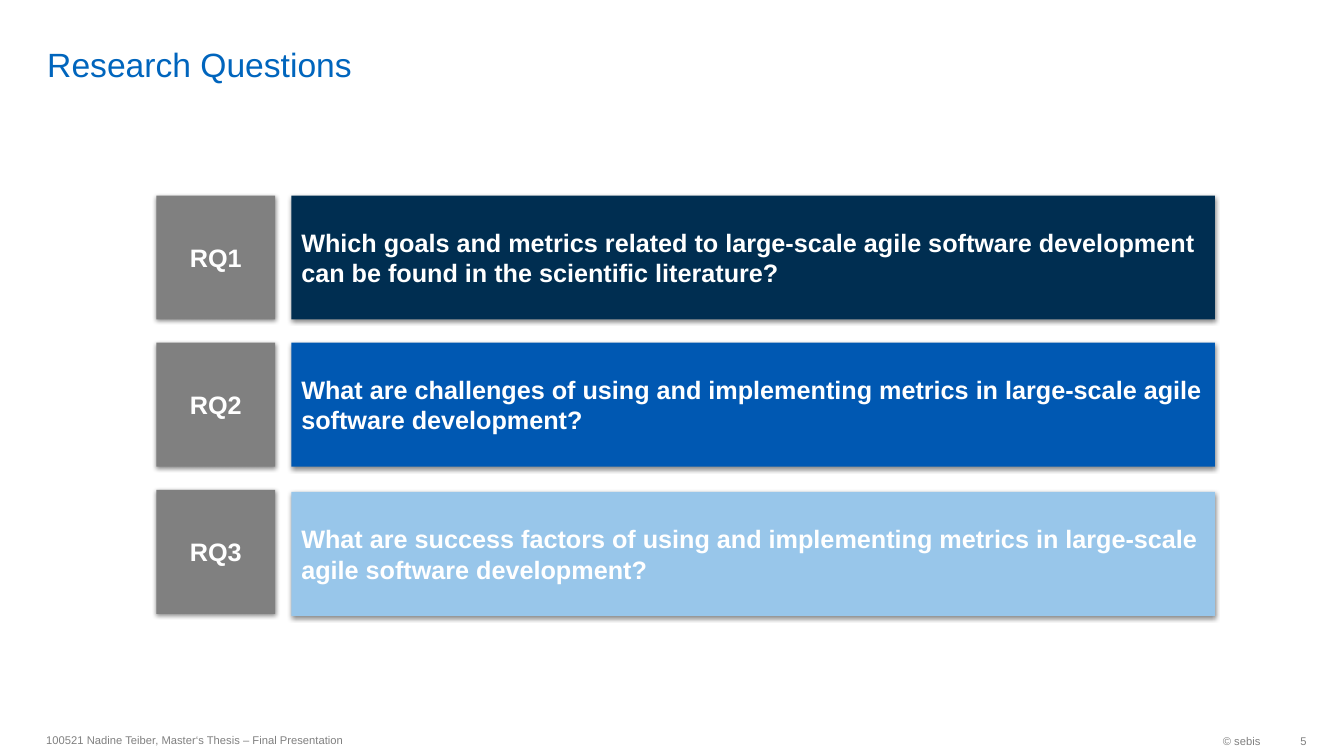
from lxml.etree import SubElement
from pptx import Presentation
from pptx.dml.color import RGBColor
from pptx.enum.shapes import MSO_SHAPE
from pptx.enum.text import MSO_ANCHOR, PP_ALIGN
from pptx.oxml.ns import qn
from pptx.util import Emu, Pt

EMU_PER_PX = 9144  # 100 px to the inch

WHITE = RGBColor(0xFF, 0xFF, 0xFF)
GRAY = RGBColor(0x80, 0x80, 0x80)
TITLE_BLUE = RGBColor(0x00, 0x65, 0xBD)
NAVY = RGBColor(0x00, 0x2E, 0x51)
BLUE = RGBColor(0x00, 0x58, 0xB2)
LIGHT_BLUE = RGBColor(0x98, 0xC6, 0xEA)

# label, label top, question, question top, question fill
QUESTIONS = [
    ("RQ1", 194, "Which goals and metrics related to large-scale agile software "
     "development can be found in the scientific literature?", 194, NAVY),
    ("RQ2", 340, "What are challenges of using and implementing metrics in "
     "large-scale agile software development?", 340, BLUE),
    ("RQ3", 486, "What are success factors of using and implementing metrics in "
     "large-scale agile software development?", 488, LIGHT_BLUE),
]
CARD_HEIGHT = 123
LABEL_LEFT, LABEL_WIDTH = 155, 118
QUESTION_LEFT, QUESTION_WIDTH = 289, 916


def px(length):
    return Emu(length * EMU_PER_PX)


def write_text(shape, text, size=8, color=GRAY, bold=False, align=PP_ALIGN.LEFT,
               anchor=MSO_ANCHOR.MIDDLE, margins=(10, 5, 10, 5)):
    """Fill a shape with one formatted paragraph; margins run left, top, right, bottom."""
    frame = shape.text_frame
    frame.word_wrap = True
    frame.vertical_anchor = anchor
    (frame.margin_left, frame.margin_top,
     frame.margin_right, frame.margin_bottom) = map(px, margins)
    para = frame.paragraphs[0]
    para.alignment = align
    span = para.add_run()
    span.text = text
    span.font.name = "Arial"
    span.font.size = Pt(size)
    span.font.bold = bold
    span.font.color.rgb = color


def add_label(page, text, left, top, width, height, **text_format):
    box = page.shapes.add_textbox(px(left), px(top), px(width), px(height))
    write_text(box, text, **text_format)


def add_soft_shadow(shape):
    shape.shadow.inherit = False
    effects = shape._element.spPr.find(qn("a:effectLst"))
    shadow = SubElement(effects, qn("a:outerShdw"), blurRad=str(Pt(3.5)),
                        dist=str(Pt(1.1)), dir="5400000", algn="t", rotWithShape="0")
    tone = SubElement(shadow, qn("a:srgbClr"), val="000000")
    SubElement(tone, qn("a:alpha"), val="45000")


def add_card(page, text, left, top, width, fill, align=PP_ALIGN.LEFT):
    card = page.shapes.add_shape(MSO_SHAPE.RECTANGLE, px(left), px(top),
                                 px(width), px(CARD_HEIGHT))
    card.fill.solid()
    card.fill.fore_color.rgb = fill
    card.line.fill.background()
    add_soft_shadow(card)
    write_text(card, text, size=18, color=WHITE, bold=True, align=align)


def main():
    deck = Presentation()
    deck.slide_width, deck.slide_height = px(1333), px(750)
    page = deck.slides.add_slide(deck.slide_layouts[6])

    add_label(page, "Research Questions", 37, 5, 1158, 79, size=24, color=TITLE_BLUE,
              anchor=MSO_ANCHOR.BOTTOM, margins=(10, 0, 10, 0))
    for label, label_top, question, question_top, fill in QUESTIONS:
        add_card(page, question, QUESTION_LEFT, question_top, QUESTION_WIDTH, fill)
        add_card(page, label, LABEL_LEFT, label_top, LABEL_WIDTH, GRAY, PP_ALIGN.CENTER)

    add_label(page, "100521 Nadine Teiber, Master‘s Thesis – Final Presentation",
              36, 718, 630, 32)
    add_label(page, "© sebis", 1026, 719, 234, 32, align=PP_ALIGN.RIGHT)
    add_label(page, "5", 1260, 719, 36, 32, align=PP_ALIGN.RIGHT, margins=(10, 5, 0, 5))
    deck.save("out.pptx")


if __name__ == "__main__":
    main()
